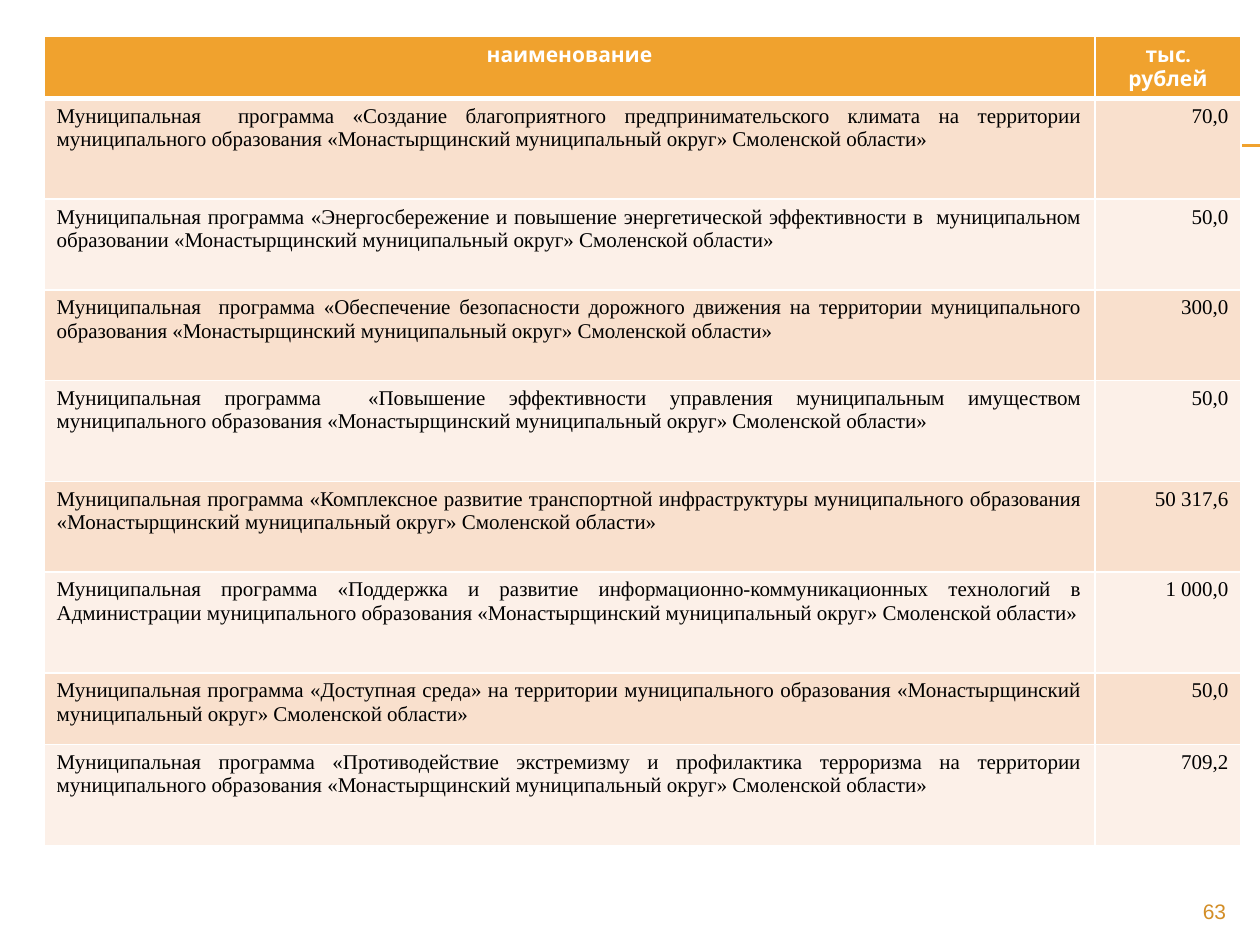
from lxml import etree
from pptx import Presentation
from pptx import util as u
from pptx.dml.color import RGBColor
from pptx.enum import shapes, text
from pptx.oxml import ns

ORANGE = RGBColor(0xF0, 0xA2, 0x2E)
DARK_ORANGE = RGBColor(0xD3, 0x8E, 0x27)
PEACH = RGBColor(0xF9, 0xE0, 0xCD)
PALE_PEACH = RGBColor(0xFC, 0xF0, 0xE8)
WHITE = RGBColor(0xFF, 0xFF, 0xFF)
BLACK = RGBColor(0, 0, 0)

HEADER = {"name": "Karla", "size": u.Pt(12), "bold": True}
BODY = {"name": "Times New Roman", "size": u.Pt(12), "bold": False}
NUMBER = {"name": "Arial", "size": u.Pt(12), "bold": False}

DISTRICT = "«Монастырщинский муниципальный округ» Смоленской области»"
PROGRAMMES = [
    ("Муниципальная  программа «Создание благоприятного предпринимательского климата "
     "на территории муниципального образования " + DISTRICT, "70,0", 0.8),
    ("Муниципальная программа «Энергосбережение и повышение энергетической эффективности "
     "в  муниципальном образовании " + DISTRICT, "50,0", 0.72),
    ("Муниципальная  программа «Обеспечение безопасности дорожного движения "
     "на территории муниципального образования " + DISTRICT, "300,0", 0.72),
    ("Муниципальная программа  «Повышение эффективности управления муниципальным "
     "имуществом муниципального образования " + DISTRICT, "50,0", 0.8),
    ("Муниципальная программа «Комплексное развитие транспортной инфраструктуры "
     "муниципального образования " + DISTRICT, "50 317,6", 0.72),
    ("Муниципальная программа «Поддержка и развитие информационно-коммуникационных "
     "технологий в Администрации муниципального образования " + DISTRICT, "1 000,0", 0.8),
    ("Муниципальная программа «Доступная среда» на территории муниципального "
     "образования " + DISTRICT, "50,0", 0.57),
    ("Муниципальная программа «Противодействие экстремизму и профилактика терроризма "
     "на территории муниципального образования " + DISTRICT, "709,2", 0.8),
]


class SlideBuilder:
    def __init__(self, page):
        self.page = page

    def fill_text(self, frame, wording, align, style, color):
        para = frame.paragraphs[0]
        para.alignment = align
        span = para.add_run()
        span.text = wording
        for key, value in style.items():
            setattr(span.font, key, value)
        span.font.color.rgb = color

    def line(self, left, right, top):
        rule = self.page.shapes.add_connector(
            shapes.MSO_CONNECTOR.STRAIGHT,
            u.Inches(left), u.Inches(top), u.Inches(right), u.Inches(top))
        rule.line.color.rgb = ORANGE
        rule.line.width = u.Pt(0.75)
        etree.SubElement(rule._element.spPr, ns.qn("a:effectLst"))

    def borders(self, cell, widths):
        properties = cell._tc.get_or_add_tcPr()
        for index, (side, width) in enumerate(widths.items()):
            edge = etree.Element(ns.qn(f"a:ln{side}"), w=str(u.Pt(width)))
            fill = etree.SubElement(edge, ns.qn("a:solidFill"))
            etree.SubElement(fill, ns.qn("a:srgbClr"), val=str(WHITE))
            properties.insert(index, edge)

    def table(self, left, top, widths, heights, rows):
        table = self.page.shapes.add_table(
            len(rows), len(widths), u.Inches(left), u.Inches(top),
            u.Inches(sum(widths)), u.Inches(sum(heights))).table
        for column, width in zip(table.columns, widths):
            column.width = u.Inches(width)
        for row, height in zip(table.rows, heights):
            row.height = u.Inches(height)
        body_aligns = (text.PP_ALIGN.JUSTIFY, text.PP_ALIGN.RIGHT)
        for r, values in enumerate(rows):
            for c, value in enumerate(values):
                cell = table.cell(r, c)
                cell.fill.solid()
                if r == 0:
                    cell.fill.fore_color.rgb = ORANGE
                    self.fill_text(cell.text_frame, value, text.PP_ALIGN.CENTER, HEADER, WHITE)
                else:
                    cell.fill.fore_color.rgb = PEACH if r % 2 else PALE_PEACH
                    self.fill_text(cell.text_frame, value, body_aligns[c], BODY, BLACK)
                self.borders(cell, {"L": 1, "R": 1, "T": 3 if r == 1 else 1,
                                    "B": 3 if r == 0 else 1})

    def text_box(self, left, top, width, height, wording, style, color):
        box = self.page.shapes.add_textbox(
            u.Inches(left), u.Inches(top), u.Inches(width), u.Inches(height))
        box.text_frame.word_wrap = True
        self.fill_text(box.text_frame, wording, text.PP_ALIGN.RIGHT, style, color)


def main():
    deck = Presentation()
    deck.slide_width, deck.slide_height = u.Inches(10), u.Inches(7.5)
    builder = SlideBuilder(deck.slides.add_slide(deck.slide_layouts[6]))
    for top in (1.15, 1.16):
        builder.line(0.56, 10, top)
    rows = [("наименование", "тыс. рублей")]
    rows += [(name, amount) for name, amount, _ in PROGRAMMES]
    heights = [0.37] + [height for _, _, height in PROGRAMMES]
    builder.table(0.35, 0.29, (8.34, 1.16), heights, rows)
    builder.text_box(9, 7.08, 0.83, 0.27, "63", NUMBER, DARK_ORANGE)
    deck.save("out.pptx")


if __name__ == "__main__":
    main()
